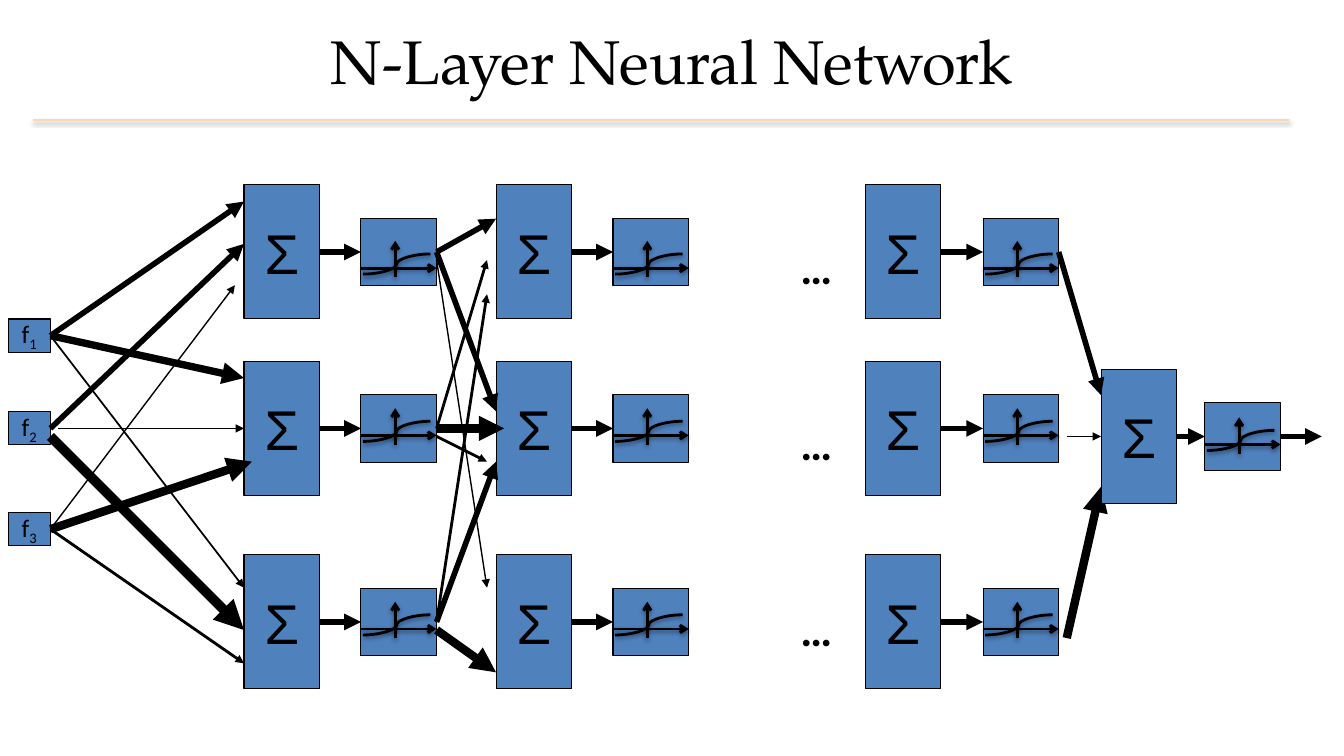
"""Build the N-layer neural network slide."""
from lxml import etree
from pptx import Presentation
from pptx import util as u
from pptx.dml.color import RGBColor
from pptx.enum import shapes, text
from pptx.oxml.ns import qn

BLACK, BLUE, PEACH = "000000", "4F81BD", "FCD5B5"
STRAIGHT, CURVE = shapes.MSO_CONNECTOR.STRAIGHT, shapes.MSO_CONNECTOR.CURVE


def color(value):
    return RGBColor.from_string(value)


class NetworkSlide:
    def __init__(self, slide):
        self.slide = slide
        self.sides = {}

    def add_words(self, paragraph, words, size, font, bold=None, baseline=None):
        run = paragraph.add_run()
        run.text = words
        run.font.size, run.font.name, run.font.bold = u.Pt(size), font, bold
        run.font.color.rgb = color(BLACK)
        if baseline:
            run.font._element.set("baseline", str(baseline))

    def title(self, words):
        title = self.slide.shapes.title
        title.left, title.top = u.Inches(0), u.Inches(-0.03)
        title.width, title.height = u.Inches(13.33), u.Inches(1.25)
        title.text_frame.vertical_anchor = text.MSO_ANCHOR.MIDDLE
        paragraph = title.text_frame.paragraphs[0]
        paragraph.alignment = text.PP_ALIGN.CENTER
        self.add_words(paragraph, words, 44, "TeX Gyre Pagella")

    def box(self, left, middle, width, height):
        box = self.slide.shapes.add_shape(
            shapes.MSO_SHAPE.RECTANGLE, u.Inches(left), u.Inches(middle - height / 2),
            u.Inches(width), u.Inches(height))
        box.shadow.inherit = False
        box.fill.solid()
        box.fill.fore_color.rgb = color(BLUE)
        box.line.color.rgb = color(BLACK)
        box.line.width = u.Pt(0.75)
        frame = box.text_frame
        frame.word_wrap = False
        frame.vertical_anchor = text.MSO_ANCHOR.MIDDLE
        frame.paragraphs[0].alignment = text.PP_ALIGN.CENTER
        self.sides[left, middle] = box, 1
        self.sides[round(left + width, 2), middle] = box, 3
        return frame.paragraphs[0]

    def feature(self, index, middle):
        label = self.box(0.08, middle, 0.42, 0.33)
        self.add_words(label, "f", 18, "Calibri")
        self.add_words(label, str(index), 18, "Calibri", baseline=-25000)

    def summation(self, left, middle):
        self.add_words(self.box(left, middle, 0.75, 1.33), "Σ", 40, "Arial")

    def activation(self, left, middle, axis):
        self.box(left, middle, 0.75, 0.67)
        plot = {"width": 2, "shadow": True}
        self.line((left, axis), (left + 0.75, axis), head="arrow", **plot)
        self.line((left + 0.34, axis + 0.09), (left + 0.34, axis - 0.27), head="arrow", **plot)
        self.line((left + 0.02, axis + 0.06), (left + 0.69, axis - 0.14), kind=CURVE, **plot)

    def line(self, start, end, width, head=None, shadow=False, tint=BLACK, kind=STRAIGHT):
        line = self.slide.shapes.add_connector(kind, *map(u.Inches, start + end))
        line.line.color.rgb = color(tint)
        line.line.width = u.Pt(width)
        if head:
            etree.SubElement(line.line._get_or_add_ln(), qn("a:tailEnd"), type=head)
        effects = etree.SubElement(line._element.spPr, qn("a:effectLst"))
        if shadow:
            outer = etree.SubElement(effects, qn("a:outerShdw"), blurRad="40000",
                                     dist="20000", dir="5400000", rotWithShape="0")
            shade = etree.SubElement(outer, qn("a:srgbClr"), val=BLACK)
            etree.SubElement(shade, qn("a:alpha"), val="38000")
        return line

    def arrow(self, start, end, width):
        arrow = self.line(start, end, width, head="triangle")
        if start in self.sides:
            arrow.begin_connect(*self.sides[start])
        if end in self.sides:
            arrow.end_connect(*self.sides[end])

    def ellipsis(self, top):
        gap = self.slide.shapes.add_textbox(*map(u.Inches, (7.84, top, 0.51, 0.63)))
        gap.text_frame.word_wrap = False
        self.add_words(gap.text_frame.paragraphs[0], "…", 32, "Calibri", bold=True)


def main():
    deck = Presentation()
    deck.slide_width, deck.slide_height = u.Inches(13.33), u.Inches(7.5)
    network = NetworkSlide(deck.slides.add_slide(deck.slide_layouts[5]))
    network.title("N-Layer Neural Network")
    network.line((0.33, 1.19), (12.78, 1.19), 1, shadow=True, tint=PEACH)
    network.arrow((10.58, 6.33), (10.92, 4.83), 6)

    for index, middle in enumerate((3.33, 4.25, 5.25), 1):
        network.feature(index, middle)

    rows = ((2.5, 2.66), (4.25, 4.32), (6.17, 6.24))
    layers = ((2.42, 3.58), (4.92, 6.08), (8.58, 9.75))
    neurons = [(*layer, *row) for layer in layers for row in rows]
    for sum_left, activation_left, middle, axis in neurons + [(10.92, 11.95, 4.33, 4.41)]:
        network.summation(sum_left, middle)
        network.activation(activation_left, middle, axis)
        network.arrow((round(sum_left + 0.75, 2), middle), (activation_left, middle), 4)

    for top in (2.33, 4.08, 5.92):
        network.ellipsis(top)

    input_weights = (
        ((0.5, 3.33), (2.42, 5.83), 1.25), ((0.5, 4.33), (2.42, 6.25), 7),
        ((0.5, 5.25), (2.42, 6.58), 2), ((0.5, 3.33), (2.42, 3.75), 5.25),
        ((0.58, 4.25), (2.42, 4.25), 1), ((0.5, 5.25), (2.5, 4.58), 6),
        ((0.5, 3.33), (2.42, 2), 4), ((0.5, 4.25), (2.42, 2.42), 4),
        ((0.5, 5.25), (2.33, 2.83), 1))
    hidden_weights = (
        ((4.33, 2.5), (4.92, 2.17), 4), ((4.33, 2.5), (4.92, 4.08), 4),
        ((4.33, 2.58), (4.83, 5.83), 1), ((4.33, 6.25), (4.92, 6.67), 6),
        ((4.33, 4.25), (5, 4.25), 6), ((4.33, 6.17), (4.92, 4.58), 4),
        ((4.33, 6.17), (4.83, 2.92), 2), ((4.33, 4.25), (4.83, 2.58), 2),
        ((4.33, 4.33), (4.83, 4.58), 2))
    output_weights = (
        ((10.5, 2.5), (10.92, 3.92), 4), ((10.58, 4.33), (10.92, 4.33), 1),
        ((12.7, 4.33), (13.11, 4.33), 4))
    for start, end, width in input_weights + hidden_weights + output_weights:
        network.arrow(start, end, width)

    deck.save("out.pptx")


if __name__ == "__main__":
    main()
